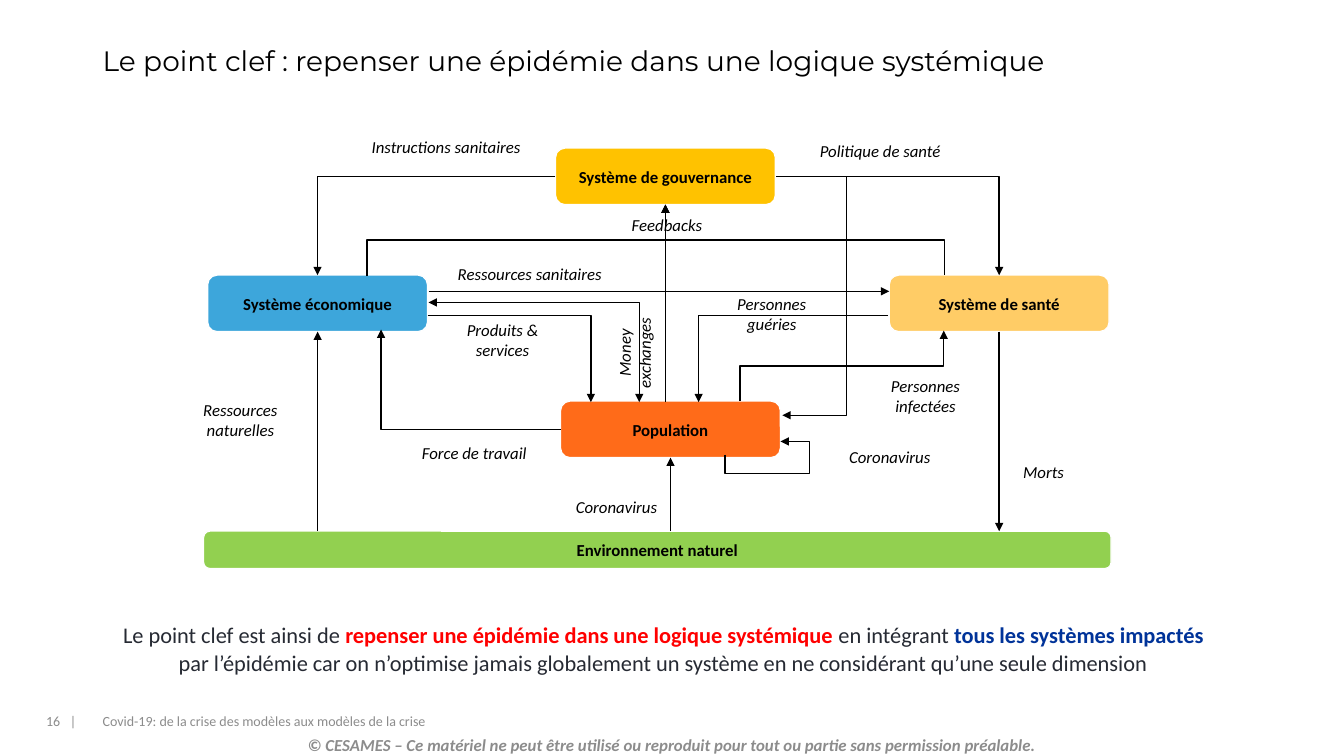
from dataclasses import dataclass

from lxml import etree
from pptx import Presentation
from pptx import util as u
from pptx.dml import color
from pptx.enum import shapes, text
from pptx.oxml import ns


@dataclass(frozen=True)
class Theme:
    body: str = "Calibri"
    heading: str = "Montserrat"
    black: str = "000000"
    white: str = "FFFFFF"
    grey: str = "8C8C8C"
    ink: str = "262A33"
    red: str = "FF0000"
    navy: str = "003399"
    green: str = "92D050"
    orange: str = "FF6B19"
    amber: str = "FFC200"
    blue: str = "3DA6DB"
    sand: str = "FFCC66"
    title_size: float = 20
    message_size: float = 16
    label_size: float = 12
    footer_size: float = 10
    border: float = 0.85
    flow: float = 1


THEME = Theme()
CENTER = text.PP_ALIGN.CENTER
BOTTOM = 2  # connection site
BOX_W, BOX_H = 2.18, 0.56


@dataclass(frozen=True)
class Span:
    words: str
    size: float = THEME.label_size
    ink: str = THEME.black
    bold: bool = False
    italic: bool = False
    font: str = THEME.body


@dataclass(frozen=True)
class System:
    name: str
    left: float
    top: float
    fill: str
    width: float = BOX_W
    height: float = BOX_H


@dataclass(frozen=True)
class Flow:
    """An arrow through right-angled points; start and end name joined systems."""
    points: tuple[tuple[float, float], ...]
    start: str = ""
    end: str = ""
    both_ways: bool = False


@dataclass(frozen=True)
class Label:
    lines: tuple[str, ...]
    left: float
    top: float
    width: float = 1.1
    height: float = 0.27
    rotation: float = 0


@dataclass(frozen=True)
class TextBlock:
    spans: tuple[Span, ...]
    left: float
    top: float
    width: float
    height: float
    align: text.PP_ALIGN = text.PP_ALIGN.LEFT
    anchor: text.MSO_ANCHOR = text.MSO_ANCHOR.MIDDLE
    spacing: float = 1


GOVERNANCE, ECONOMY = "Système de gouvernance", "Système économique"
HEALTH, POPULATION = "Système de santé", "Population"

SYSTEMS = (
    System("Environnement naturel", 2.02, 5.27, THEME.green, 9, 0.37),
    System(POPULATION, 5.56, 3.98, THEME.orange),
    System(GOVERNANCE, 5.51, 1.47, THEME.amber),
    System(ECONOMY, 2.06, 2.73, THEME.blue),
    System(HEALTH, 8.82, 2.73, THEME.sand),
)

FLOWS = (
    Flow(((6.65, 5.27), (6.65, 4.54)), end=POPULATION),
    Flow(((3.15, 5.27), (3.15, 3.29)), end=ECONOMY),
    Flow(((9.91, 3.29), (9.91, 5.27)), start=HEALTH),
    Flow(((6.6, 3.99), (6.6, 2.03)), end=GOVERNANCE),
    Flow(((4.25, 2.89), (8.82, 2.89))),
    Flow(((7.19, 4.51), (7.19, 4.7), (8.03, 4.7), (8.03, 4.38), (7.74, 4.38))),
    Flow(((7.7, 1.75), (9.91, 1.75), (9.91, 2.73))),
    Flow(((5.51, 1.75), (3.15, 1.75), (3.15, 2.73))),
    Flow(((7.34, 3.98), (7.34, 3.63), (9.36, 3.63), (9.36, 3.28))),
    Flow(((5.56, 4.26), (3.78, 4.26), (3.78, 3.27))),
    Flow(((4.24, 3.13), (5.86, 3.13), (5.86, 3.99))),
    Flow(((8.81, 3.13), (6.93, 3.13), (6.93, 3.99))),
    Flow(((7.7, 1.75), (8.4, 1.75), (8.4, 4.12), (7.76, 4.12))),
    Flow(((4.25, 3), (6.34, 3), (6.34, 3.99)), both_ways=True),
    Flow(((9.37, 2.73), (9.37, 2.38), (6.6, 2.38), (6.6, 2.03))),
    Flow(((3.64, 2.74), (3.64, 2.38), (6.6, 2.38), (6.6, 2.03))),
)

LABELS = (
    Label(("Coronavirus",), 5.57, 4.89),
    Label(("Force de travail",), 4.16, 4.36),
    Label(("Politique de santé",), 7.74, 1.36, 1.99),
    Label(("Instructions sanitaires",), 3.64, 1.26, 1.58, 0.39),
    Label(("Personnes", "infectées"), 8.75, 3.79, 0.87),
    Label(("Coronavirus",), 8.28, 4.4),
    Label(("Ressources sanitaires",), 4.71, 2.58),
    Label(("Ressources", "naturelles"), 1.84, 4.03),
    Label(("Produits &", "services"), 4.44, 3.18, height=0.39),
    Label(("Morts",), 9.9, 4.55, 0.91),
    Label(("Personnes", "guéries"), 7.11, 2.98),
    Label(("Money", "exchanges"), 5.93, 3.29, 0.72, 0.41, 270),
    Label(("Feedbacks",), 6.07, 2.1),
)

SIZE = THEME.message_size
TEXT_BLOCKS = (
    TextBlock((Span("Le point clef : repenser une épidémie dans une logique systémique",
                    THEME.title_size, font=THEME.heading),), 0.92, 0.4, 12.32, 0.43, spacing=0.9),
    TextBlock((Span("Le point clef est ainsi de ", SIZE, THEME.ink),
               Span("repenser une épidémie dans une logique systémique ", SIZE, THEME.red, True),
               Span("en intégrant ", SIZE, THEME.ink),
               Span("tous les systèmes impactés ", SIZE, THEME.navy, True),
               Span("par l’épidémie car on n’optimise jamais globalement un système "
                    "en ne considérant qu’une seule dimension", SIZE, THEME.ink)),
              1.08, 6.09, 11, 0.66, CENTER, text.MSO_ANCHOR.TOP, 1.07),
    TextBlock((Span("Covid-19: de la crise des modèles aux modèles de la crise",
                    THEME.footer_size, THEME.grey),), 0.92, 6.95, 8.04, 0.4),
    TextBlock((Span("16   |", THEME.footer_size, THEME.grey),), 0.36, 6.95, 0.67, 0.4),
    TextBlock((Span("© CESAMES – Ce matériel ne peut être utilisé ou reproduit pour tout "
                    "ou partie sans permission préalable.", ink=THEME.grey, bold=True,
                    italic=True),), 0, 7.24, 13.33, 0.3, CENTER),
)


def rgb(value: str) -> color.RGBColor:
    return color.RGBColor.from_string(value)


def bounds(item: System | Label | TextBlock) -> list[u.Length]:
    return [u.Inches(n) for n in (item.left, item.top, item.width, item.height)]


def add_span(para, span: Span) -> None:
    run = para.add_run()
    run.text = span.words
    font = run.font
    font.name, font.size = span.font, u.Pt(span.size)
    font.bold, font.italic = span.bold, span.italic
    font.color.rgb = rgb(span.ink)


def draw_system(page, system: System):
    box = page.shapes.add_shape(shapes.MSO_SHAPE.ROUNDED_RECTANGLE, *bounds(system))
    box.shadow.inherit = False
    box.fill.solid()
    box.fill.fore_color.rgb = rgb(system.fill)
    box.line.color.rgb = rgb(THEME.white)
    box.line.width = u.Pt(THEME.border)
    box.text_frame.vertical_anchor = text.MSO_ANCHOR.MIDDLE
    para = box.text_frame.paragraphs[0]
    para.alignment = CENTER
    add_span(para, Span(system.name, bold=True))
    return box


def add_elbow(page, points: tuple[tuple[float, float], ...]):
    """Add a bent connector, turned a quarter when its first leg is vertical."""
    (ax, ay), (bx, by) = points[0], points[-1]
    dx, dy = bx - ax, by - ay
    upright = points[1][0] == ax
    along, across = (dy, -dx) if upright else (dx, dy)
    mid_x, mid_y = (ax + bx) / 2, (ay + by) / 2
    ends = (mid_x - along / 2, mid_y - across / 2, mid_x + along / 2, mid_y + across / 2)
    line = page.shapes.add_connector(shapes.MSO_CONNECTOR.ELBOW, *map(u.Inches, ends))
    if upright:
        line.element.spPr.find(ns.qn("a:xfrm")).set("rot", str(90 * 60000))
    geometry = line.element.spPr.find(ns.qn("a:prstGeom"))
    geometry.set("prst", f"bentConnector{len(points) - 1}")
    guides = geometry.find(ns.qn("a:avLst"))
    for index, corner in enumerate(points[1:-2]):
        axis = (index + upright) % 2
        share = (corner[axis] - points[0][axis]) / (dx, dy)[axis]
        etree.SubElement(guides, ns.qn("a:gd"), name=f"adj{index + 1}",
                         fmla=f"val {round(share * 100000)}")
    return line


def draw_flow(page, flow: Flow, boxes: dict) -> None:
    if len(flow.points) == 2:
        ends = [u.Inches(n) for point in flow.points for n in point]
        line = page.shapes.add_connector(shapes.MSO_CONNECTOR.STRAIGHT, *ends)
    else:
        line = add_elbow(page, flow.points)
    if flow.start:
        line.begin_connect(boxes[flow.start], BOTTOM)
    if flow.end:
        line.end_connect(boxes[flow.end], BOTTOM)
    line.line.color.rgb = rgb(THEME.black)
    line.line.width = u.Pt(THEME.flow)
    stroke = line.line._get_or_add_ln()
    for tip in ("a:headEnd", "a:tailEnd") if flow.both_ways else ("a:tailEnd",):
        etree.SubElement(stroke, ns.qn(tip), type="triangle")
    etree.SubElement(line.element.spPr, ns.qn("a:effectLst"))


def draw_label(page, label: Label) -> None:
    box = page.shapes.add_shape(shapes.MSO_SHAPE.FLOWCHART_TERMINATOR, *bounds(label))
    box.shadow.inherit = False
    box.fill.background()
    box.line.fill.background()
    box.rotation = label.rotation
    frame = box.text_frame
    frame.word_wrap = False
    frame.vertical_anchor = text.MSO_ANCHOR.MIDDLE
    frame.margin_left, frame.margin_right = 0, u.Inches(0.05)
    frame.margin_top = frame.margin_bottom = u.Inches(0.07)
    for index, words in enumerate(label.lines):
        para = frame.add_paragraph() if index else frame.paragraphs[0]
        para.alignment = CENTER
        para._p.get_or_add_pPr().set("marL", str(u.Inches(0.04)))
        add_span(para, Span(words, italic=True))


def draw_text(page, block: TextBlock) -> None:
    frame = page.shapes.add_textbox(*bounds(block)).text_frame
    frame.word_wrap = True
    frame.vertical_anchor = block.anchor
    para = frame.paragraphs[0]
    para.alignment, para.line_spacing = block.align, block.spacing
    for span in block.spans:
        add_span(para, span)


def main() -> None:
    deck = Presentation()
    deck.slide_width, deck.slide_height = u.Inches(13.33), u.Inches(7.5)
    page = deck.slides.add_slide(deck.slide_layouts[6])
    boxes = {system.name: draw_system(page, system) for system in SYSTEMS}
    for flow in FLOWS:
        draw_flow(page, flow, boxes)
    for label in LABELS:
        draw_label(page, label)
    for block in TEXT_BLOCKS:
        draw_text(page, block)
    deck.save("out.pptx")


if __name__ == "__main__":
    main()
